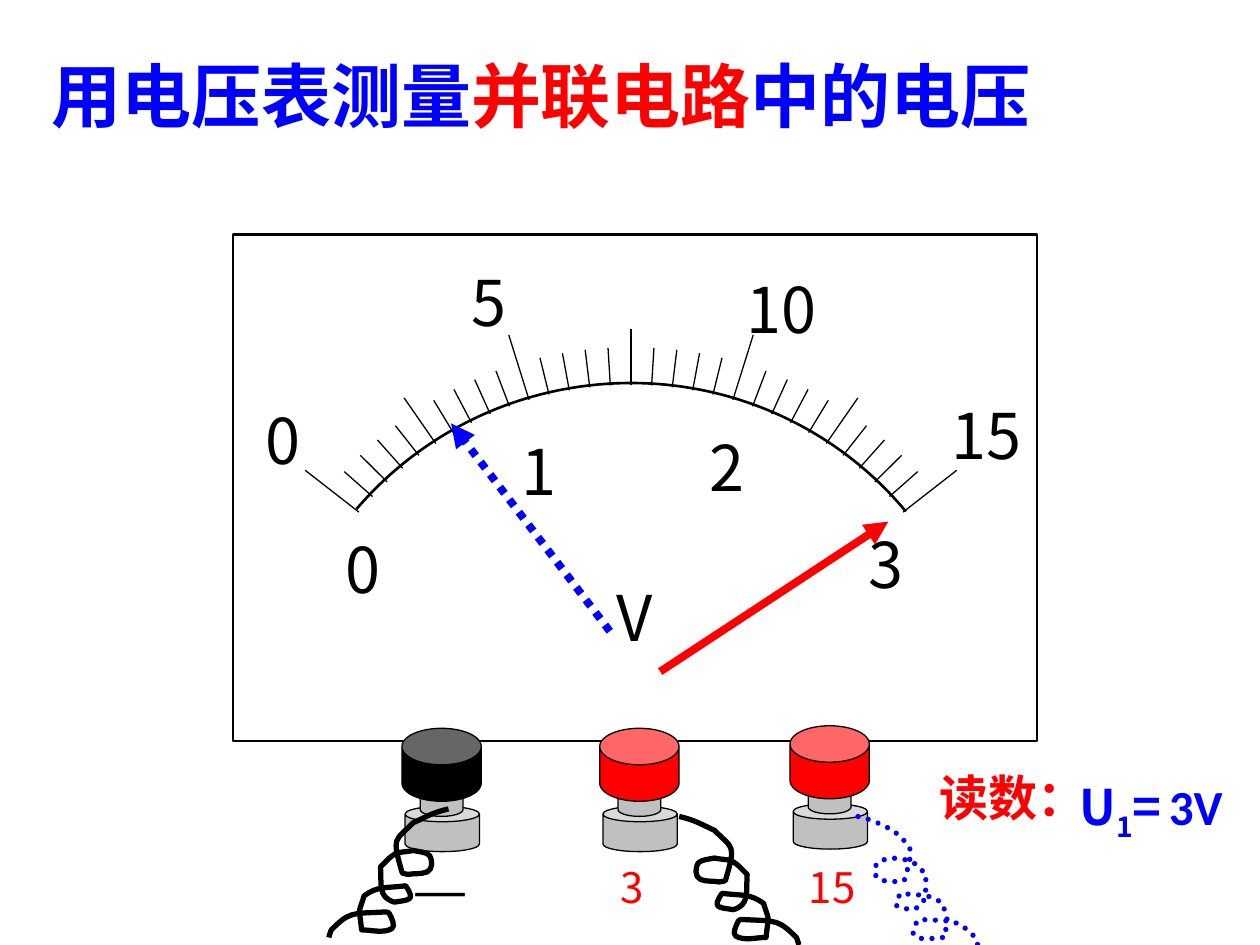
from copy import deepcopy
from dataclasses import dataclass
from math import cos, radians, sin

from lxml.etree import SubElement
from pptx import Presentation
from pptx.dml.color import RGBColor
from pptx.enum.dml import MSO_LINE_DASH_STYLE as Dash
from pptx.enum.shapes import MSO_CONNECTOR as Connector, MSO_SHAPE as Shape
from pptx.enum.text import PP_ALIGN as Align
from pptx.oxml.ns import qn
from pptx.util import Inches, Pt


@dataclass(frozen=True)
class Theme:
    black: str = "000000"
    white: str = "FFFFFF"
    grey: str = "C0C0C0"
    red: str = "FF0000"
    blue: str = "0000FF"
    sans: str = "Noto Sans CJK SC"
    latin: str = "Calibri"
    serif: str = "Times New Roman"
    title: int = 40
    scale: int = 36
    reading: int = 28
    label: int = 24
    gap: int = 18


THEME = Theme()

# Content: all positions are columns and rows of a 100 x 75 grid
TITLE = [("用电压表测量", {}), ("并联电路", {"color": THEME.red}), ("中的电压", {})]
READING = [("U", {}), ("1", {"baseline": -25000}), ("=", {}),
           (" ", {"size": THEME.gap, "font": THEME.latin}),
           ("3V", {"font": THEME.latin})]
# Scale labels: text, centre column, top row
SCALE_LABELS = [("V", 50.4, 45.4), ("5", 38.8, 20.4), ("0", 22.5, 31.4),
                ("3", 70.3, 41.2), ("2", 57.7, 33.5), ("1", 42.8, 33.8),
                ("0", 28.8, 41.6), ("10", 62, 21), ("15", 78.3, 31)]
TERMINAL_LABELS = [("15", 63.2, 67.9, {}), ("3", 48.3, 67.9, {}),
                   ("—", 32, 67.6, {"size": THEME.reading, "font": THEME.serif,
                                    "color": THEME.black, "bold": True})]
TERMINALS = [(47.6, 57.8, THEME.red), (62.7, 57.6, THEME.red),
             (31.9, 57.8, THEME.black)]
# Dial: centre, radius, half angle of the arc, extra slant of the ticks
DIAL_X, DIAL_Y, RADIUS, HALF_ANGLE, SLANT = 50.08, 58.7, 28.15, 50.1, 1.04
DIVISIONS = 30
ARC = [(28.3, 40.4), (33.7, 34.1), (41.6, 30.4), (50.1, 30.4),
       (58.6, 30.4), (66.6, 34.2), (71.9, 40.6)]
ARC_APEX = (50.1, 57.4)
# Coiled wire: chained Bezier points, relative to its upper end
COIL = [(0, 0), (1.3, .3), (1.7, .6), (2.8, 1.1), (4.3, 2.6), (4.5, 2.2),
        (3.7, 5), (3.7, 5.2), (3.4, 5.1), (3.2, 5.2), (2.7, 5.1), (2.2, 5.2),
        (1.7, 5), (1.2, 4.8), (1.3, 4), (1.5, 3.7), (1.8, 3.4), (2.4, 3.4),
        (2.8, 3.3), (3.8, 3.5), (4, 3.3), (4.7, 3.9), (4.9, 4.1), (5.4, 4.6),
        (5.4, 4.6), (5.3, 6.1), (5.6, 7), (4.3, 7.4), (3.1, 7.2), (2.6, 7.3),
        (3.4, 6.1), (5, 6.3), (5.6, 6.1), (6.7, 6.9), (7.2, 8.5), (7.1, 7.6),
        (6.9, 9.6), (6.1, 9.6), (5.2, 9.9), (4.5, 9.5), (4.2, 9.3), (4.5, 8.7),
        (4.7, 8.3), (4.8, 8.1), (5.2, 8.2), (5.4, 8.2), (7.7, 8.3), (7.9, 8.2),
        (9.3, 9.6), (9.4, 9.8), (9.5, 10.2), (9.5, 10.2)]

presentation = Presentation()
presentation.slide_width, presentation.slide_height = Inches(10), Inches(7.5)
slide = presentation.slides.add_slide(presentation.slide_layouts[6])
shapes = slide.shapes


def grid(*values):
    return [round(value * presentation.slide_width / 100) for value in values]


def style_line(line, color, width, dash=None):
    line.color.rgb = RGBColor.from_string(color)
    line.width = Pt(width)
    if dash:
        line.dash_style = dash


def add_text(runs, left, top, width, height, *, size, color, font=THEME.sans,
             bold=False, align=Align.LEFT, side_margin=1):
    frame = shapes.add_textbox(*grid(left, top, width, height)).text_frame
    frame.word_wrap = True
    frame.margin_left = frame.margin_right = grid(side_margin)[0]
    paragraph = frame.paragraphs[0]
    paragraph.alignment = align
    base = {"size": size, "color": color, "font": font, "baseline": 0}
    for text, changes in runs:
        look = {**base, **changes}
        run = paragraph.add_run()
        run.text = text
        run.font.size, run.font.bold = Pt(look["size"]), bold
        run.font.color.rgb = RGBColor.from_string(look["color"])
        run.font.name = look["font"]
        properties = run.font._element
        SubElement(properties, qn("a:ea"), typeface=look["font"])
        if look["baseline"]:
            properties.set("baseline", str(look["baseline"]))


def add_solid(kind, left, top, width, height, fill, line_width, depth=None):
    shape = shapes.add_shape(kind, *grid(left, top, width, height))
    shape.shadow.inherit = False
    shape.fill.solid()
    shape.fill.fore_color.rgb = RGBColor.from_string(fill)
    style_line(shape.line, THEME.black, line_width)
    if depth:
        shape.adjustments[0] = depth


def add_line(start, end, color, width, dash=None, arrow=False):
    connector = shapes.add_connector(Connector.STRAIGHT, *grid(*start, *end))
    style_line(connector.line, color, width, dash)
    if arrow:
        SubElement(connector.line._get_or_add_ln(), qn("a:tailEnd"), type="triangle")
    SubElement(connector._element.spPr, qn("a:effectLst"))


def add_curve(points, color, width, dash=None, apex=None):
    """Draw chained cubic Beziers; an apex adds an unstroked sector below."""
    corners = points[1:] + ([apex] if apex else [])
    builder = shapes.build_freeform(*grid(*points[0]))
    builder.add_line_segments([grid(*point) for point in corners], close=False)
    shape = builder.convert_to_shape()
    shape.shadow.inherit = False
    shape.fill.background()
    style_line(shape.line, color, width, dash)
    if dash:
        shape.line._get_or_add_ln().set("cap", "rnd")
    # Every three straight segments become one Bezier segment
    outline = next(shape._element.iter(qn("a:path")))
    segments = outline.findall(qn("a:lnTo"))
    for first in range(0, len(points) - 1, 3):
        curve = SubElement(outline, qn("a:cubicBezTo"))
        for segment in segments[first:first + 3]:
            curve.append(segment[0])
            outline.remove(segment)
    if apex:
        edge = segments[-1]
        outline.remove(edge)
        sector = deepcopy(outline)
        sector.set("stroke", "0")
        sector.append(edge)
        SubElement(sector, qn("a:close"))
        outline.addnext(sector)


def add_coil(left, top, color, direction=1, dash=None):
    add_curve([(left + direction * x, top + y) for x, y in COIL], color, 3, dash)


# Meter face with its ticks and arc
add_solid(Shape.RECTANGLE, 18.5, 18.6, 63.8, 40.2, THEME.white, 1.5)
for tick in range(DIVISIONS + 1):
    angle = radians(HALF_ANGLE * (2 * tick / DIVISIONS - 1))
    length = 5.4 if tick % 10 == 0 else 4.4 if tick % 5 == 0 else 3
    x, y = DIAL_X + RADIUS * sin(angle), DIAL_Y - RADIUS * cos(angle)
    outer = (x + length * sin(SLANT * angle), y - length * cos(SLANT * angle))
    add_line(outer, (x, y), THEME.black, 0.75)
add_curve(ARC, THEME.black, 1.5, apex=ARC_APEX)
for text, center, top in SCALE_LABELS:
    width, height = (8, 8.8) if text == "V" else (4 * len(text), 5.4)
    add_text([(text, {})], center - width / 2, top, width, height,
             size=THEME.scale, color=THEME.black, align=Align.CENTER, side_margin=0)

# Title
add_text(TITLE, 3.1, 3.7, 86.2, 7.7, size=THEME.title, color=THEME.blue, bold=True)

# Terminals: base, stem and cap
for text, left, top, changes in TERMINAL_LABELS:
    add_text([(text, {})], left, top, 8.2, 6,
             **{"size": THEME.label, "color": THEME.red, **changes})
for left, top, color in TERMINALS:
    add_solid(Shape.CAN, left + 0.25, top + 6.2, 5.9, 3.6, THEME.grey, 0.75, 0.34)
    add_solid(Shape.CAN, left + 1.45, top + 3.7, 3.4, 3.3, THEME.grey, 0.75, 0.33)
    add_solid(Shape.CAN, left, top, 6.3, 5.8, color, 0.75, 0.5)

# Wires and needles
add_coil(35.6, 64.2, THEME.black, direction=-1)
add_coil(53.9, 64.8, THEME.black)
add_line((52.4, 53.3), (70.5, 41.4), THEME.red, 4.5, arrow=True)
add_coil(68.1, 64.8, THEME.blue, dash=Dash.ROUND_DOT)
add_line((48.4, 50.1), (35.8, 33.6), THEME.blue, 4.5, Dash.ROUND_DOT, arrow=True)

# Reading
add_text([("读数：", {})], 73.6, 60.4, 13.4, 5.7, size=THEME.reading,
         color=THEME.red, font=THEME.latin, bold=True)
add_text(READING, 84.7, 61.1, 15.3, 5.7, size=THEME.reading, color=THEME.blue,
         bold=True)

presentation.save("out.pptx")
